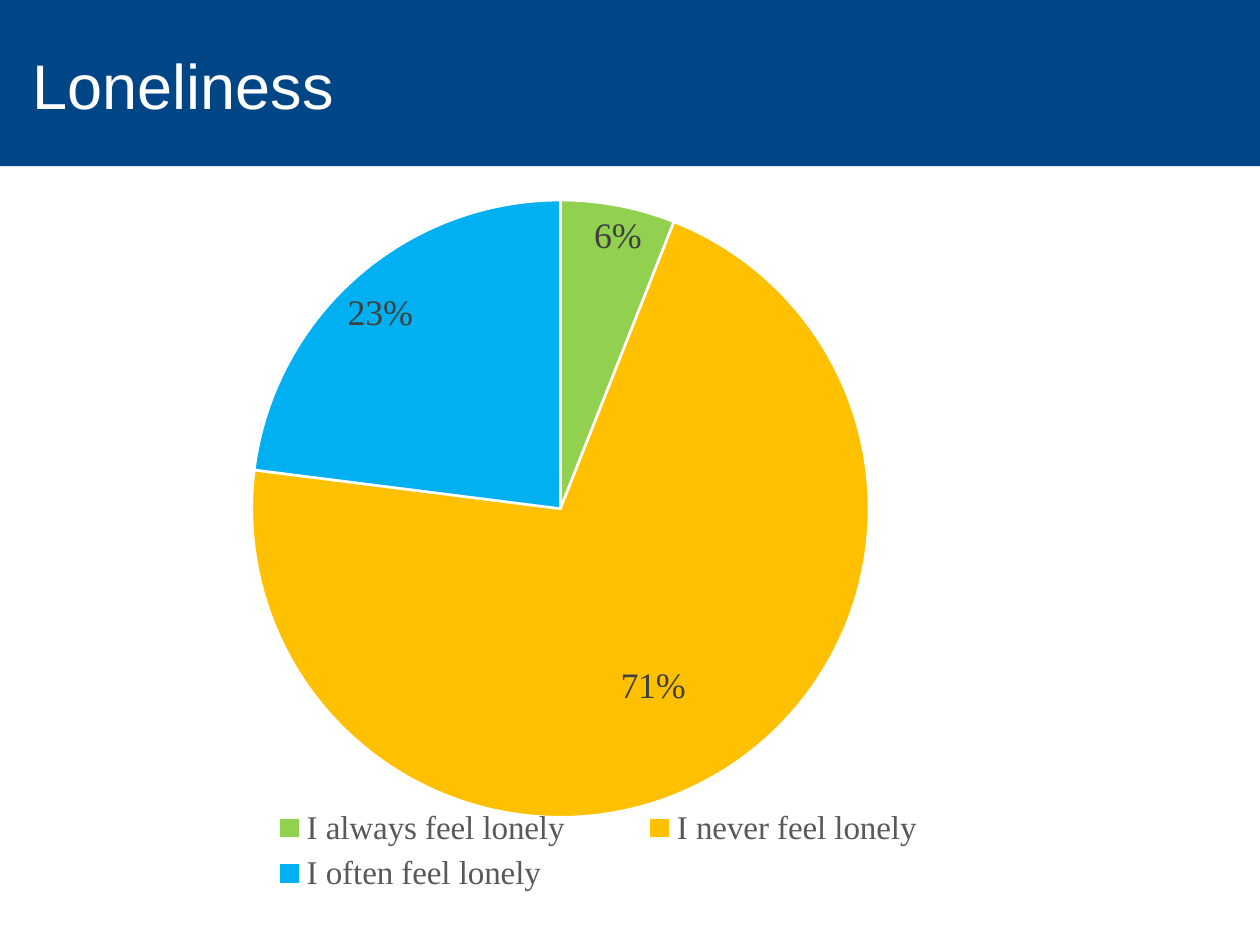
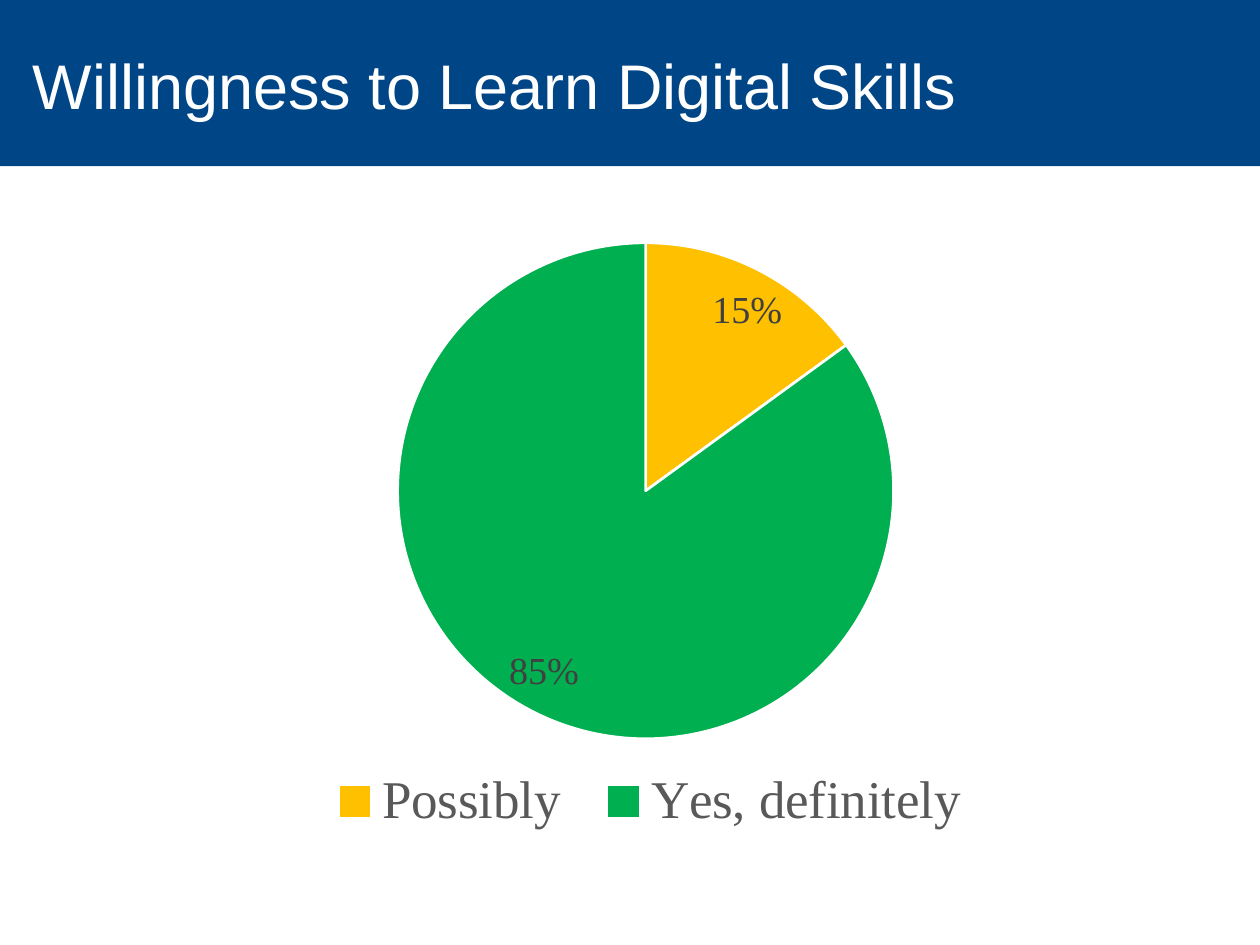
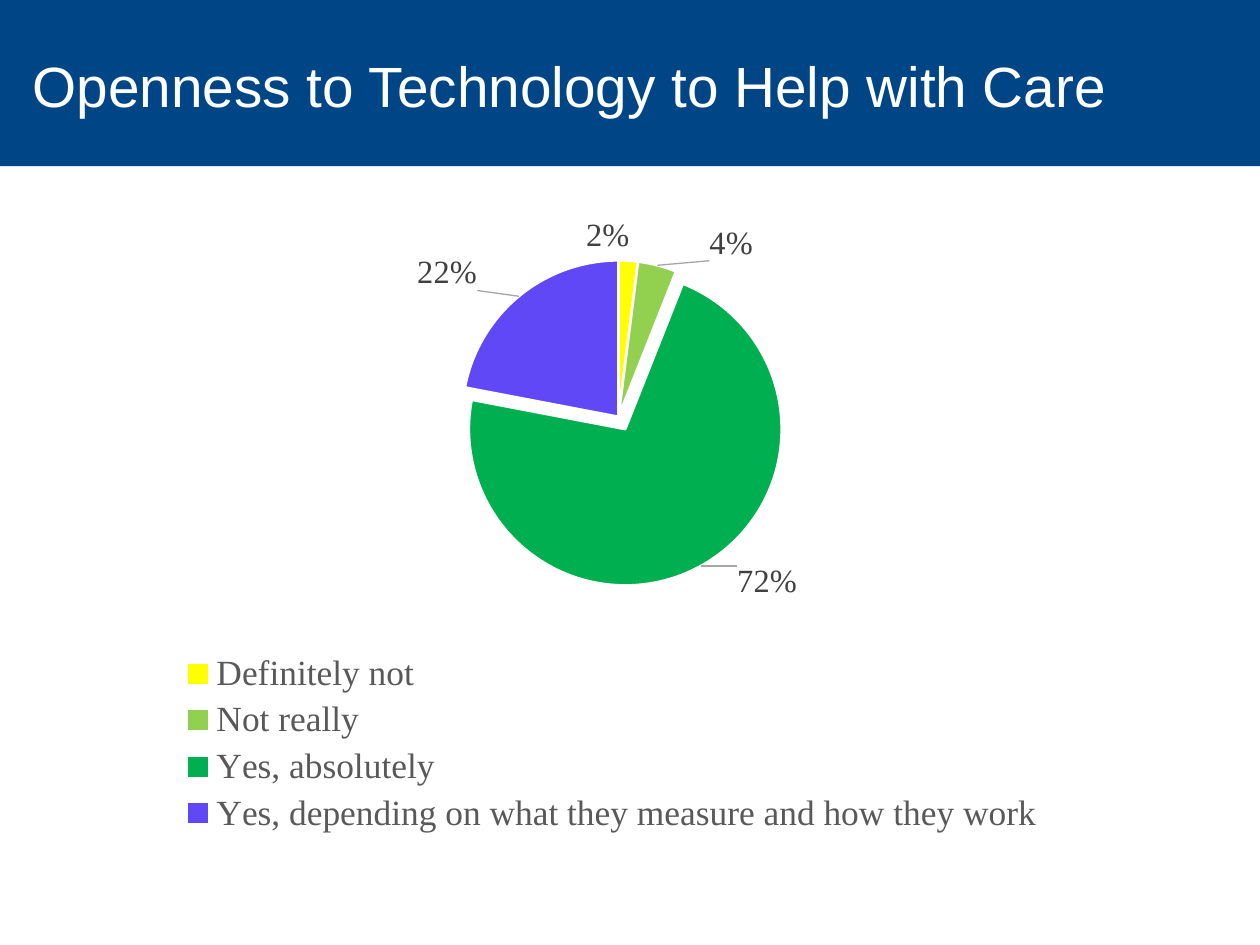
from copy import deepcopy

from pptx import Presentation
from pptx.chart.data import CategoryChartData
from pptx.dml.color import RGBColor
from pptx.enum.chart import XL_CHART_TYPE, XL_LABEL_POSITION, XL_LEGEND_POSITION
from pptx.enum.shapes import MSO_SHAPE
from pptx.enum.text import MSO_ANCHOR, MSO_AUTO_SIZE, PP_ALIGN
from pptx.oxml import parse_xml
from pptx.oxml.ns import nsdecls, qn
from pptx.util import Pt

PIE = XL_CHART_TYPE.PIE
BOTTOM = XL_LEGEND_POSITION.BOTTOM
INSIDE = XL_LABEL_POSITION.INSIDE_END
OUTSIDE = XL_LABEL_POSITION.OUTSIDE_END
RECT = MSO_SHAPE.RECTANGLE

NAVY = RGBColor(0x00, 0x46, 0x86)
WHITE = RGBColor(0xFF, 0xFF, 0xFF)
BLACK = RGBColor(0x00, 0x00, 0x00)
DARK = RGBColor(0x40, 0x40, 0x40)
GREY = RGBColor(0x59, 0x59, 0x59)
LIME = RGBColor(0x92, 0xD0, 0x50)
GOLD = RGBColor(0xFF, 0xC0, 0x00)
SKY = RGBColor(0x00, 0xB0, 0xF0)
GREEN = RGBColor(0x00, 0xB0, 0x50)
YELLOW = RGBColor(0xFF, 0xFF, 0x00)
VIOLET = RGBColor(0x61, 0x48, 0xF6)
SANS, SERIF = "Arial", "Times New Roman"
BANDS = [(0, 88.5), (88.5, 6.5)]

# "plot" and "key" are x, y, width and height in percent of the chart;
# "moves" shifts the label of a slice; "pull" sets a slice apart.
PAGES = [
    dict(title="Loneliness", size=36, frame=(60, 80, 521, 446),
         slices=[("I always feel lonely", 6, LIME),
                 ("I never feel lonely", 71, GOLD),
                 ("I often feel lonely", 23, SKY)],
         plot=(16.1, 7.7, 67.7, 79.1), key=(11, 84.6, 86.2, 13),
         place=INSIDE, label=20.5, legend=18.9,
         moves={0: (2.7, 0.6), 1: (-3.1, -7.9), 2: (-1.5, 1.5)}, pull={}),
    dict(title="Willingness to Learn Digital Skills", size=36,
         frame=(70.5, 108, 600.5, 375),
         slices=[("Possibly", 15, GOLD), ("Yes, definitely", 85, GREEN)],
         plot=(26.1, 8.2, 47.2, 75.6), key=(17.7, 88.5, 64.8, 12),
         place=INSIDE, label=21.8, legend=30.3,
         moves={0: (2.6, 2), 1: (-2.6, -2)}, pull={}),
    dict(title="Openness to Technology to Help with Care", size=32.4,
         frame=(0, 111.6, 700, 368.6),
         slices=[("Definitely not", 2, YELLOW), ("Not really", 4, LIME),
                 ("Yes, absolutely", 72, GREEN),
                 ("Yes, depending on what they measure and how they work",
                  22, VIOLET)],
         plot=(37.7, 10.1, 25.6, 48.5), key=(13.5, 70, 73, 30),
         place=OUTSIDE, label=18.5, legend=20.2,
         moves={0: (-1.7, -0.1), 1: (4.1, 0.4),
                2: (2.7, -1.4), 3: (-3, 0)},
         pull={2: 9}),
]


def layout(box, inner=False):
    """Return a manual chart layout: a box from the edges, or a label shift."""
    tags = ""
    if inner:
        tags += '<c:layoutTarget val="inner"/>'
    if len(box) == 4:
        tags += '<c:xMode val="edge"/><c:yMode val="edge"/>'
    for tag, val in zip("xywh", box):
        tags += f'<c:{tag} val="{val / 100:.3f}"/>'
    return parse_xml(f'<c:layout {nsdecls("c")}><c:manualLayout>{tags}'
                     '</c:manualLayout></c:layout>')


def style(font, name, size, color):
    font.name, font.size = name, Pt(size)
    font.color.rgb = color


prs = Presentation()
prs.slide_width, prs.slide_height = Pt(720), Pt(540)

for page in PAGES:
    slide = prs.slides.add_slide(prs.slide_layouts[5])
    for top, high in BANDS:
        band = slide.shapes.add_shape(RECT, 0, Pt(top), Pt(720), Pt(high))
        band.shadow.inherit = False
        band.fill.solid()
        band.fill.fore_color.rgb = NAVY
        band.line.fill.background()
        slide.shapes.element.insert(2, band.element)

    title = slide.shapes.title
    title.left, title.top = Pt(11.5), Pt(17)
    title.width, title.height = Pt(672), Pt(62.5)
    frame = title.text_frame
    frame.text = page["title"]
    frame.auto_size = MSO_AUTO_SIZE.NONE
    frame.vertical_anchor = MSO_ANCHOR.MIDDLE
    para = frame.paragraphs[0]
    para.alignment = PP_ALIGN.LEFT
    style(para.runs[0].font, SANS, page["size"], WHITE)

    names, vals, fills = zip(*page["slices"])
    data = CategoryChartData()
    data.categories = names
    data.add_series("Series 1", vals)
    box = [Pt(val) for val in page["frame"]]
    chart = slide.shapes.add_chart(PIE, *box, data).chart
    chart.has_title = False
    style(chart.font, SERIF, 10, BLACK)
    chart.has_legend = True
    chart.legend.position = BOTTOM
    chart.legend.include_in_layout = False
    style(chart.legend.font, SERIF, page["legend"], GREY)

    root = chart.element
    for old in root.xpath(".//c:plotArea/c:layout | .//c:legend/c:layout"):
        old.getparent().remove(old)
    root.xpath(".//c:plotArea")[0].insert(0, layout(page["plot"], inner=True))
    root.xpath(".//c:legendPos")[0].addnext(layout(page["key"]))

    plot = chart.plots[0]
    plot.vary_by_categories = True
    series = plot.series[0]
    for num, fill in enumerate(fills):
        look = series.points[num].format
        look.fill.solid()
        look.fill.fore_color.rgb = fill
        look.line.color.rgb = WHITE
        look.line.width = Pt(1.5)
    for num, far in page["pull"].items():
        part = root.xpath(f".//c:dPt[c:idx/@val='{num}']/c:spPr")[0]
        part.addprevious(parse_xml(f'<c:explosion {nsdecls("c")} val="{far}"/>'))

    labels = series.data_labels
    labels.show_value = False
    labels.show_percentage = True
    labels.number_format = "0%"
    labels.number_format_is_linked = False
    labels.position = page["place"]
    style(labels.font, SERIF, page["label"], DARK)

    group = root.xpath(".//c:ser/c:dLbls")[0]
    shared = [kid for kid in group if kid.tag != qn("c:showLeaderLines")]
    for num, move in page["moves"].items():
        tag = parse_xml(f'<c:dLbl {nsdecls("c")}><c:idx val="{num}"/></c:dLbl>')
        tag.append(layout(move))
        tag.extend(deepcopy(shared))
        group.insert(num, tag)
    for lead in group.xpath("c:showLeaderLines"):
        group.remove(lead)
    group.append(parse_xml(f'<c:showLeaderLines {nsdecls("c")} val="1"/>'))
    group.append(parse_xml(
        f'<c:leaderLines {nsdecls("c", "a")}><c:spPr><a:ln w="9525"><a:solidFill>'
        '<a:srgbClr val="A6A6A6"/></a:solidFill></a:ln></c:spPr></c:leaderLines>'))

prs.save("out.pptx")
